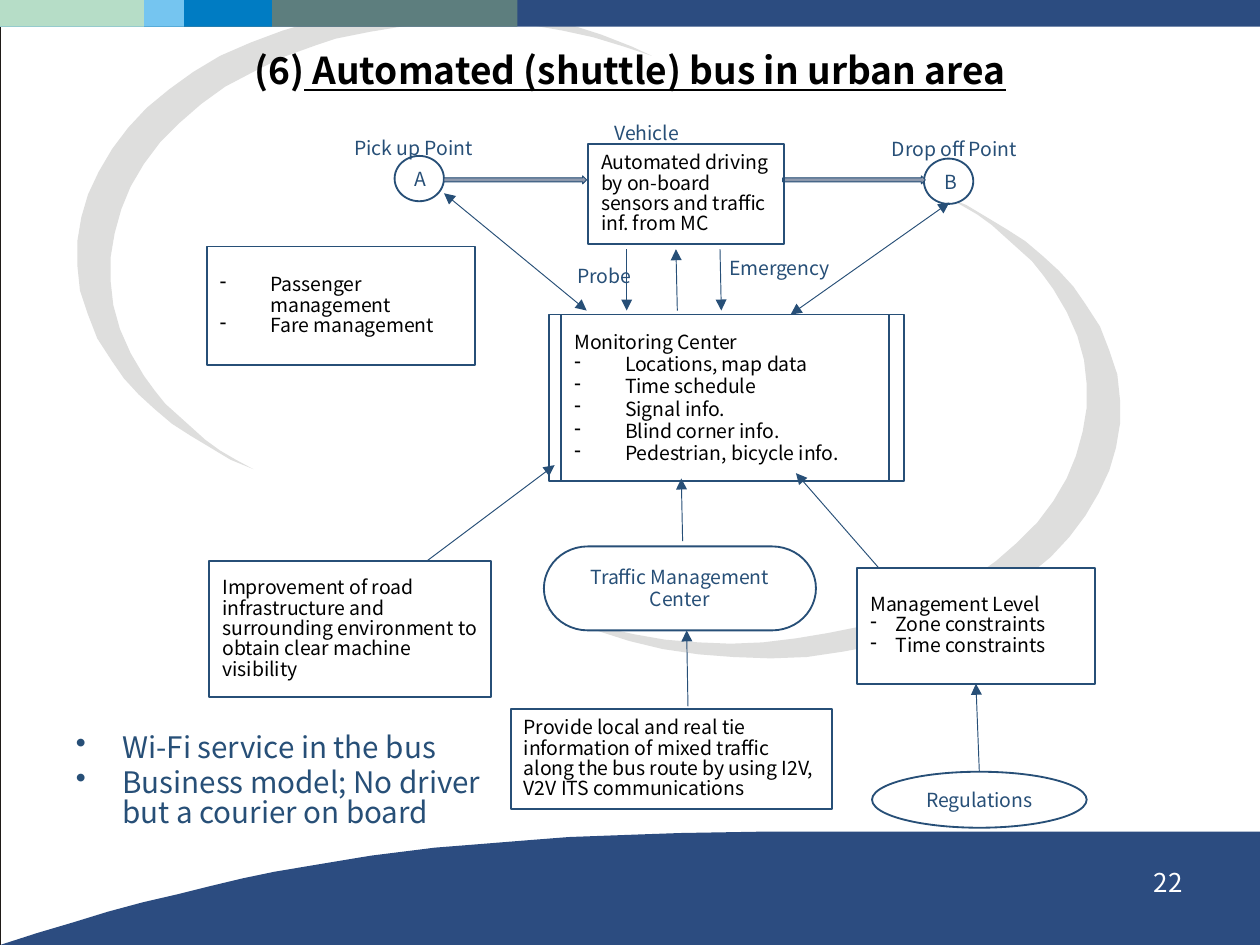
from pptx import Presentation
from pptx.dml.color import RGBColor
from pptx.enum.shapes import MSO_CONNECTOR as Link, MSO_SHAPE as Kind
from pptx.enum.text import MSO_ANCHOR as Anchor, MSO_AUTO_SIZE as Fit, PP_ALIGN as Align
from pptx.oxml.ns import qn
from pptx.util import Inches, Pt
from lxml.etree import SubElement

FACE = "Noto Sans CJK JP"
NAVY, BLUE, GREY, BLACK, WHITE = "2C4C80", "274F77", "DEDEDD", "000000", "FFFFFF"

# Outlines in hundredths of an inch
SWOOSH = [
    (212, 23), (239, 15), (266, 10), (293, 6), (320, 5), (348, 6), (374, 8),
    (401, 12), (426, 18), (451, 26), (474, 35), (489, 42), (468, 35), (445, 28),
    (422, 23), (399, 19), (374, 17), (350, 16), (326, 17), (301, 20), (277, 24),
    (252, 29), (237, 34), (212, 43), (190, 54), (169, 65), (151, 78), (135, 92),
    (120, 107), (108, 123), (98, 140), (91, 157), (86, 175), (83, 193), (83, 211),
    (85, 229), (90, 247), (98, 265), (108, 282), (116, 293), (124, 303), (134, 312),
    (144, 321), (154, 330), (165, 338), (177, 345), (190, 352), (173, 345),
    (158, 336), (143, 327), (129, 318), (116, 307), (104, 296), (93, 284), (84, 271),
    (73, 254), (66, 236), (60, 218), (58, 199), (58, 181), (61, 163), (66, 146),
    (74, 129), (84, 112), (96, 96), (110, 81), (127, 67), (145, 54), (165, 42),
    (188, 32)]
HILL = [
    (949, 624), (946, 709), (0, 709), (28, 700), (55, 692), (81, 684), (107, 677),
    (133, 671), (157, 665), (182, 659), (206, 654), (230, 650), (254, 646),
    (278, 642), (302, 639), (326, 636), (351, 634), (376, 632), (401, 630),
    (427, 628), (454, 627), (482, 626), (510, 625), (569, 624)]


def tint(code):
    return RGBColor.from_string(code)


def style(run, size=10.5, color=BLUE, bold=False, under=False):
    font = run.font
    font.name, font.size, font.bold = FACE, Pt(size), bold
    font.color.rgb = tint(color)
    if under:
        font.underline = True


def write(shape, text, align=Align.LEFT, anchor=Anchor.MIDDLE, lead=None,
          gap=0, indent=0.38, **look):
    """Fill a shape; a line that opens with - or • becomes a bullet."""
    frame = shape.text_frame
    frame.word_wrap, frame.auto_size = True, Fit.NONE
    frame.vertical_anchor = anchor
    for i, line in enumerate(text.split("\n")):
        para = frame.add_paragraph() if i else frame.paragraphs[0]
        para.alignment = align
        para.space_before = Pt(gap if i else 0)
        if lead:
            para.line_spacing = lead
        if line[0] in "-•":
            props = para._p.get_or_add_pPr()
            props.set("marL", str(Inches(indent)))
            props.set("indent", str(-Inches(indent)))
            SubElement(props, qn("a:buChar")).set("char", line[0])
            line = line[2:]
        run = para.add_run()
        run.text = line
        style(run, **look)


def paint(shape, fill=None, line=None, width=1):
    shape.shadow.inherit = False
    if fill:
        shape.fill.solid()
        shape.fill.fore_color.rgb = tint(fill)
    else:
        shape.fill.background()
    if line:
        shape.line.color.rgb = tint(line)
        shape.line.width = Pt(width)
    else:
        shape.line.fill.background()


def block(slide, kind, at, fill=None, line=BLUE, width=1):
    shape = slide.shapes.add_shape(kind, *map(Inches, at))
    paint(shape, fill, line, width)
    return shape


def box(slide, at, text="", lead=11, fill=None, **look):
    shape = block(slide, Kind.RECTANGLE, at, fill)
    if text:
        write(shape, text, lead=Pt(lead), color=BLACK, **look)
    return shape


def node(slide, kind, at, text, **look):
    shape = block(slide, kind, at, WHITE)
    write(shape, text, align=Align.CENTER, **look)
    return shape


def label(slide, at, text, **look):
    area = slide.shapes.add_textbox(*map(Inches, at))
    write(area, text, anchor=Anchor.TOP, **look)


def arrow(slide, start, end, both=False):
    line = slide.shapes.add_connector(Link.STRAIGHT, *map(Inches, start + end))
    line.line.color.rgb = tint(BLUE)
    line.line.width = Pt(0.5)
    stroke = line.line._get_or_add_ln()
    for tip in ("a:headEnd", "a:tailEnd") if both else ("a:tailEnd",):
        SubElement(stroke, qn(tip)).set("type", "triangle")
    SubElement(line._element.spPr, qn("a:effectLst"))
    return line


def route(slide, left):
    shape = block(slide, Kind.RIGHT_ARROW, (left, 1.32, 1.07, 0.06), width=0.5)
    shape.fill.gradient()
    shape.fill.gradient_angle = 270
    for stop, code in zip(shape.fill.gradient_stops, ("9FA9B9", "7F8CA3")):
        stop.color.rgb = tint(code)


def outline(slide, points, fill):
    pen = slide.shapes.build_freeform(*points[0], scale=Inches(0.01))
    pen.add_line_segments(points[1:], close=True)
    paint(pen.convert_to_shape(), fill)


def backdrop(slide):
    block(slide, Kind.RECTANGLE, (0, 0, 9.46, 7.09), line="1F1A17", width=0.13)
    outline(slide, SWOOSH, GREY)
    outline(slide, [(898 - x, 499 - y) for x, y in SWOOSH], GREY)
    for wide, code in ((9.46, NAVY), (3.88, "5D7E7E"), (2.04, "007CC3"),
                       (1.38, "75C5F0"), (1.08, "B6DDC7")):
        block(slide, Kind.RECTANGLE, (0, 0, wide, 0.2), code, line=None)
    outline(slide, HILL, NAVY)


def heading(slide):
    title = slide.shapes.title
    title.left, title.top, title.width, title.height = map(
        Inches, (0.47, 0.19, 8.51, 0.66))
    look = dict(size=20, color=BLACK, bold=True)
    write(title, "(6)", align=Align.CENTER, **look)
    rest = title.text_frame.paragraphs[0].add_run()
    rest.text = " Automated (shuttle) bus in urban area"
    style(rest, under=True, **look)
    # Bring the title in front of the backdrop
    title.element.getparent().append(title.element)


def diagram(slide):
    # Bus route
    node(slide, Kind.OVAL, (2.96, 1.17, 0.37, 0.34), "A")
    node(slide, Kind.OVAL, (6.93, 1.19, 0.37, 0.34), "B")
    route(slide, 3.33)
    route(slide, 5.87)
    box(slide, (4.41, 1.08, 1.47, 0.75),
        "Automated driving by on-board sensors and traffic inf. from MC")
    label(slide, (4.51, 0.86, 0.79, 0.32), "Vehicle")
    label(slide, (2.56, 0.98, 1.24, 0.45), "Pick up Point", lead=Pt(12))
    label(slide, (6.59, 0.99, 1.24, 0.46), "Drop off Point", lead=Pt(12))
    label(slide, (4.23, 1.93, 0.79, 0.32), "Probe")
    label(slide, (5.37, 1.87, 1.11, 0.38), "Emergency")

    # Centers and what feeds them
    box(slide, (1.55, 1.85, 2.01, 0.89), "- Passenger management\n- Fare management")
    box(slide, (4.12, 2.36, 2.66, 1.25))
    box(slide, (4.21, 2.36, 2.46, 1.25),
        "Monitoring Center\n- Locations, map data\n- Time schedule\n- Signal info.\n"
        "- Blind corner info.\n- Pedestrian, bicycle info.", lead=12)
    node(slide, Kind.FLOWCHART_TERMINATOR, (4.08, 4.1, 2.04, 0.63),
         "Traffic Management\nCenter", lead=Pt(12))
    box(slide, (1.57, 4.21, 2.11, 1.02), "Improvement of road infrastructure and "
        "surrounding environment to obtain clear machine visibility")
    box(slide, (3.83, 5.32, 2.41, 0.75), "Provide local and real tie information of "
        "mixed traffic along the bus route by using I2V, V2V ITS communications")
    level = box(slide, (6.43, 4.26, 1.78, 0.87),
                "Management Level\n- Zone constraints\n- Time constraints",
                fill=WHITE, indent=0.19)
    rules = node(slide, Kind.OVAL, (6.54, 5.79, 1.61, 0.42), "Regulations")

    # Arrows
    arrow(slide, (3.33, 1.45), (4.4, 2.33), both=True)
    arrow(slide, (7.12, 1.52), (5.93, 2.36), both=True)
    for start, end in (((4.7, 1.87), (4.7, 2.33)), ((5.4, 1.87), (5.41, 2.33)),
                       ((5.08, 2.33), (5.07, 1.87)), ((6.59, 4.26), (5.97, 3.55)),
                       ((5.12, 4.06), (5.11, 3.59)), ((3.2, 4.21), (4.16, 3.49)),
                       ((5.16, 5.3), (5.15, 4.73))):
        arrow(slide, start, end)
    limit = arrow(slide, (7.32, 5.79), (7.32, 5.13))
    limit.begin_connect(rules, 0)
    limit.end_connect(level, 2)


def main():
    deck = Presentation()
    deck.slide_width, deck.slide_height = Inches(9.45), Inches(7.09)
    slide = deck.slides.add_slide(deck.slide_layouts[5])
    backdrop(slide)
    heading(slide)
    label(slide, (0.47, 5.46, 3.39, 0.74), "• Wi-Fi service in the bus\n"
          "• Business model; No driver but a courier on board",
          size=16, lead=0.84, gap=3, indent=0.35)
    diagram(slide)
    label(slide, (6.77, 6.45, 2.2, 0.49), "22", align=Align.RIGHT, size=14, color=WHITE)
    deck.save("out.pptx")


if __name__ == "__main__":
    main()
